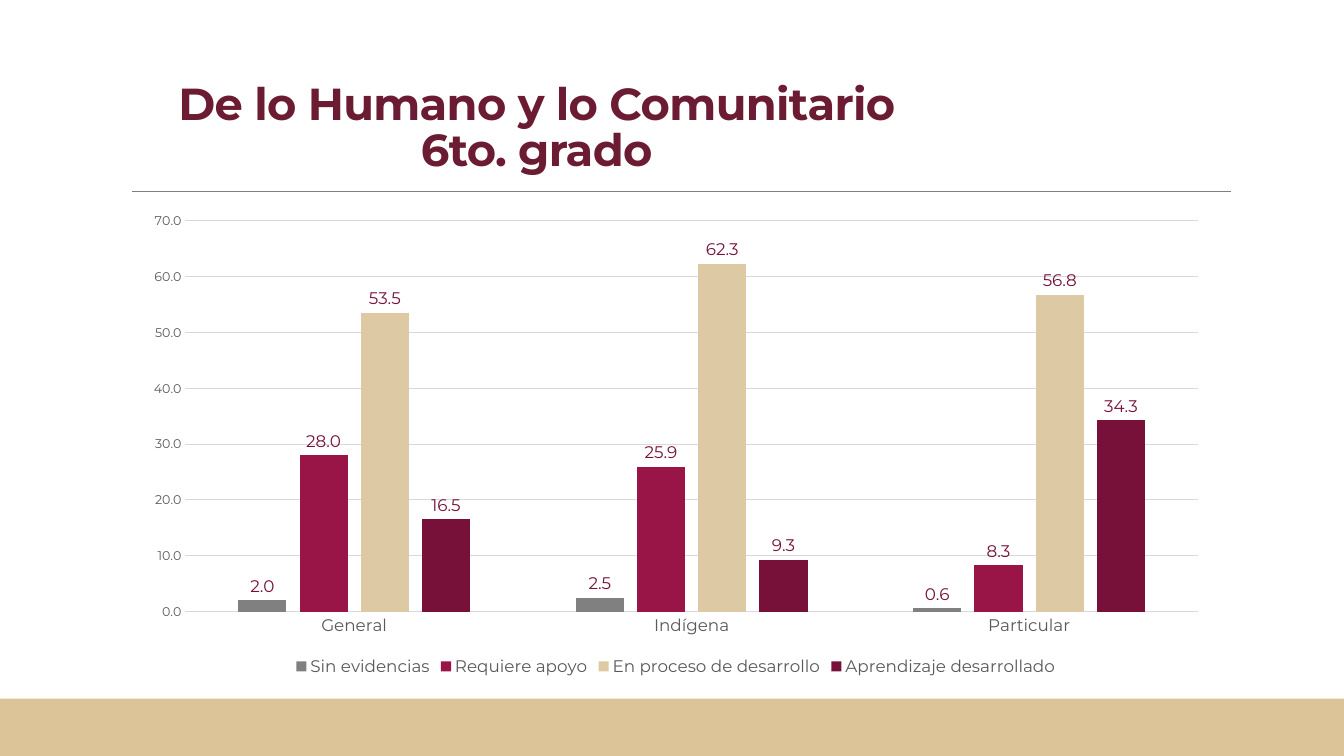
from dataclasses import dataclass

from pptx import Presentation
from pptx.chart.data import CategoryChartData
from pptx.dml.color import RGBColor
from pptx.enum.chart import XL_CHART_TYPE as ChartType
from pptx.enum.chart import XL_LABEL_POSITION as LabelPosition
from pptx.enum.chart import XL_LEGEND_POSITION as LegendPosition
from pptx.enum.chart import XL_TICK_MARK as TickMark
from pptx.enum.shapes import MSO_CONNECTOR as Connector
from pptx.enum.shapes import MSO_SHAPE as Shape
from pptx.enum.text import MSO_ANCHOR as Anchor
from pptx.enum.text import PP_ALIGN as Align
from pptx.oxml.ns import qn
from pptx.util import Pt


@dataclass(frozen=True)
class Theme:
    font: str = "Montserrat"
    title: str = "6B1C32"
    band: str = "DDC398"
    rule: str = "808080"
    grid: str = "D9D9D9"
    axis_text: str = "595959"
    label: str = "771139"
    title_size: float = 32
    chart_size: float = 12
    scale_size: float = 9
    number_format: str = "0.0"


CATEGORIES = ["General", "Indígena", "Particular"]
LEVELS = [
    ("Sin evidencias", "808080", (2.0, 2.5, 0.6)),
    ("Requiere apoyo", "991547", (28.0, 25.9, 8.3)),
    ("En proceso de desarrollo", "DDC9A3", (53.5, 62.3, 56.8)),
    ("Aprendizaje desarrollado", "771139", (16.5, 9.3, 34.3)),
]


class SlideBuilder:
    """Draws styled elements on one slide; lengths are in points."""

    def __init__(self, slide, theme):
        self.slide = slide
        self.theme = theme

    def style_font(self, font, size, color, bold=False):
        font.name = self.theme.font
        font.size = Pt(size)
        font.bold = bold
        font.color.rgb = RGBColor.from_string(color)

    def style_line(self, line, color, width):
        line.color.rgb = RGBColor.from_string(color)
        line.width = Pt(width)

    def band(self, left, top, width, height):
        shape = self.slide.shapes.add_shape(
            Shape.RECTANGLE, Pt(left), Pt(top), Pt(width), Pt(height))
        shape.shadow.inherit = False
        shape.fill.solid()
        shape.fill.fore_color.rgb = RGBColor.from_string(self.theme.band)
        shape.line.fill.background()

    def rule(self, left, right, top):
        line = self.slide.shapes.add_connector(
            Connector.STRAIGHT, Pt(left), Pt(top), Pt(right), Pt(top))
        self.style_line(line.line, self.theme.rule, 0.5)
        properties = line._element.spPr
        properties.append(properties.makeelement(qn("a:effectLst"), {}))

    def title(self, lines, left, top, width, height):
        box = self.slide.shapes.add_textbox(Pt(left), Pt(top), Pt(width), Pt(height))
        frame = box.text_frame
        frame.word_wrap = True
        frame.vertical_anchor = Anchor.MIDDLE
        paragraph = frame.paragraphs[0]
        paragraph.alignment = Align.CENTER
        paragraph.line_spacing = 0.85
        for index, text in enumerate(lines):
            if index:
                paragraph.add_line_break()
            run = paragraph.add_run()
            run.text = text
            self.style_font(run.font, self.theme.title_size, self.theme.title, bold=True)
            run._r.get_or_add_rPr().set("spc", "-50")

    def column_chart(self, categories, levels, left, top, width, height):
        theme = self.theme
        data = CategoryChartData(number_format=theme.number_format)
        data.categories = categories
        for name, _, values in levels:
            data.add_series(name, values)
        chart = self.slide.shapes.add_chart(
            ChartType.COLUMN_CLUSTERED, Pt(left), Pt(top), Pt(width), Pt(height), data).chart
        self.style_font(chart.font, theme.chart_size, theme.axis_text)
        chart.has_title = False
        chart.has_legend = True
        chart.legend.position = LegendPosition.BOTTOM
        chart.legend.include_in_layout = False
        self.style_font(chart.legend.font, theme.chart_size, theme.axis_text)
        self.axes(chart)

        plot = chart.plots[0]
        plot.vary_by_categories = False
        plot.gap_width = 219
        plot.overlap = -27
        for series, (_, color, _) in zip(plot.series, levels):
            series.format.fill.solid()
            series.format.fill.fore_color.rgb = RGBColor.from_string(color)
            series.invert_if_negative = False
            labels = series.data_labels
            labels.show_value = True
            labels.position = LabelPosition.OUTSIDE_END
            labels.number_format = theme.number_format
            labels.number_format_is_linked = False
            self.style_font(labels.font, theme.chart_size, theme.label)

    def axes(self, chart):
        theme = self.theme
        for axis, size in ((chart.category_axis, theme.chart_size),
                           (chart.value_axis, theme.scale_size)):
            axis.major_tick_mark = TickMark.NONE
            axis.minor_tick_mark = TickMark.NONE
            self.style_font(axis.tick_labels.font, size, theme.axis_text)
        self.style_line(chart.category_axis.format.line, theme.grid, 0.75)
        scale = chart.value_axis
        scale.minimum_scale, scale.maximum_scale, scale.major_unit = 0, 70, 10
        scale.format.line.fill.background()
        scale.has_major_gridlines = True
        self.style_line(scale.major_gridlines.format.line, theme.grid, 0.75)
        scale.tick_labels.number_format = theme.number_format
        scale.tick_labels.number_format_is_linked = False


def main():
    presentation = Presentation()
    presentation.slide_width = Pt(960)
    presentation.slide_height = Pt(540)
    slide = presentation.slides.add_slide(presentation.slide_layouts[6])
    builder = SlideBuilder(slide, Theme())
    builder.rule(94.3, 879, 136.8)
    builder.band(0, 499, 960, 41)
    builder.title(["De lo Humano y lo Comunitario", "6to. grado"], 72, 54.7, 622.8, 76.3)
    builder.column_chart(CATEGORIES, LEVELS, 94.3, 145.4, 776.9, 340.6)
    presentation.save("out.pptx")


if __name__ == "__main__":
    main()
